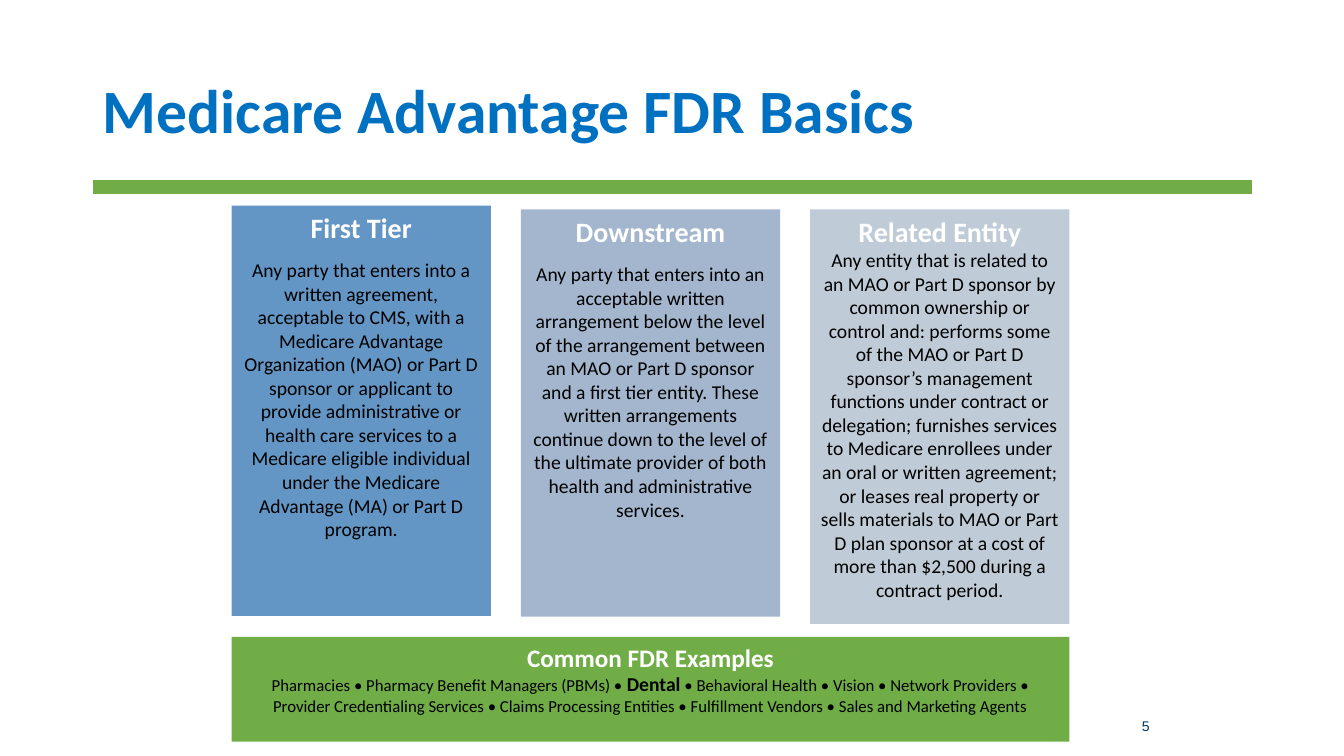
from dataclasses import dataclass

import pptx
import pptx.dml.color
import pptx.enum.shapes
import pptx.enum.text
import pptx.oxml
import pptx.util

Cm, Pt = pptx.util.Cm, pptx.util.Pt
Align = pptx.enum.text.PP_ALIGN
Anchor = pptx.enum.text.MSO_ANCHOR

COLORS = {
    "title": "0070C0", "green": "70AD47", "number": "00355F",
    "first": "6396C5", "downstream": "A3B6CD", "related": "BFCCD7",
    "white": "FFFFFF", "black": "000000",
}
RULE_LEFT, RULE_TOP, RULE_WIDTH = 2.34, 4.7, 29.21
TIER_LEFT, TIER_WIDTH, TIER_PITCH = 5.84, 6.53, 7.29


@dataclass(frozen=True)
class Span:
    text: str
    size: float
    color: str = "black"
    bold: bool = False
    font: str = "Calibri"


@dataclass(frozen=True)
class Para:
    spans: tuple[Span, ...]
    align: Align = Align.CENTER
    formats: tuple[tuple[str, object], ...] = ()


@dataclass(frozen=True)
class Tier:
    heading: str
    body: str
    color: str
    top: float
    height: float
    gap: float = 0


TIERS = (
    Tier("First Tier",
         "Any party that enters into a written agreement, acceptable to CMS, with a "
         "Medicare Advantage Organization (MAO) or Part D sponsor or applicant to provide "
         "administrative or health care services to a Medicare eligible individual under "
         "the Medicare Advantage (MA) or Part D program.",
         "first", 5.18, 10.34, 10),
    Tier("Downstream",
         "Any party that enters into an acceptable written arrangement below the level of "
         "the arrangement between an MAO or Part D sponsor and a first tier entity. These "
         "written arrangements continue down to the level of the ultimate provider of both "
         "health and administrative services.",
         "downstream", 5.28, 10.26, 10),
    Tier("Related Entity",
         "Any entity that is related to an MAO or Part D sponsor by common ownership or "
         "control and: performs some of the MAO or Part D sponsor’s management functions "
         "under contract or delegation; furnishes services to Medicare enrollees under an "
         "oral or written agreement; or leases real property or sells materials to MAO or "
         "Part D plan sponsor at a cost of more than $2,500 during a contract period.",
         "related", 5.28, 10.44),
)
EXAMPLES = (
    Span("Pharmacies • Pharmacy Benefit Managers (PBMs) • ", 12),
    Span("Dental", 14, bold=True),
    Span(" • Behavioral Health • Vision • Network Providers • Provider Credentialing "
         "Services • Claims Processing Entities • Fulfillment Vendors • Sales and "
         "Marketing Agents", 12),
)


def rgb(name: str) -> pptx.dml.color.RGBColor:
    return pptx.dml.color.RGBColor.from_string(COLORS[name])


def apply(target: object, formats: dict[str, object]) -> None:
    for name, value in formats.items():
        setattr(target, name, value)


def write(box, paras: tuple[Para, ...], anchor: Anchor = Anchor.TOP, **frame_formats) -> None:
    frame = box.text_frame
    apply(frame, {"word_wrap": True, "vertical_anchor": anchor,
                  "auto_size": pptx.enum.text.MSO_AUTO_SIZE.NONE, **frame_formats})
    for index, item in enumerate(paras):
        para = frame.add_paragraph() if index else frame.paragraphs[0]
        apply(para, {"alignment": item.align, **dict(item.formats)})
        for span in item.spans:
            run = para.add_run()
            run.text = span.text
            apply(run.font, {"name": span.font, "size": Pt(span.size), "bold": span.bold})
            run.font.color.rgb = rgb(span.color)


def add_panel(page, left: float, top: float, width: float, height: float,
              color: str, paras: tuple[Para, ...]) -> None:
    box = page.shapes.add_shape(pptx.enum.shapes.MSO_SHAPE.RECTANGLE,
                                Cm(left), Cm(top), Cm(width), Cm(height))
    box.shadow.inherit = False
    box.fill.solid()
    box.fill.fore_color.rgb = rgb(color)
    box.line.fill.background()
    write(box, paras)


def add_rule(page) -> None:
    rule = page.shapes.add_connector(pptx.enum.shapes.MSO_CONNECTOR.STRAIGHT,
                                     Cm(RULE_LEFT), Cm(RULE_TOP),
                                     Cm(RULE_LEFT + RULE_WIDTH), Cm(RULE_TOP))
    rule.line.width = Pt(10)
    rule.line.color.rgb = rgb("green")
    properties = rule.element.spPr
    properties.append(properties.makeelement(pptx.oxml.ns.qn("a:effectLst"), {}))


def main() -> None:
    deck = pptx.Presentation()
    apply(deck, {"slide_width": Cm(33.87), "slide_height": Cm(19.05)})
    page = deck.slides.add_slide(deck.slide_layouts[6])

    add_rule(page)
    title = page.shapes.add_textbox(Cm(RULE_LEFT), Cm(1.02), Cm(RULE_WIDTH), Cm(3.68))
    write(title, (Para((Span("Medicare Advantage FDR Basics", 44, "title", True),),
                       Align.LEFT, (("line_spacing", 0.9),)),), Anchor.MIDDLE)
    number = page.shapes.add_textbox(Cm(28.09), Cm(17.78), Cm(1.27), Cm(1.02))
    write(number, (Para((Span("5", 10, "number", font="Arial"),), Align.LEFT),),
          Anchor.MIDDLE, margin_left=Cm(0.69), margin_right=0, margin_top=0, margin_bottom=0)

    for index, tier in enumerate(TIERS):
        add_panel(page, TIER_LEFT + index * TIER_PITCH, tier.top, TIER_WIDTH, tier.height,
                  tier.color,
                  (Para((Span(tier.heading, 20, "white", True),)),
                   Para((Span(tier.body, 14),), formats=(("space_before", Pt(tier.gap)),))))
    add_panel(page, TIER_LEFT, 16.05, 2 * TIER_PITCH + TIER_WIDTH, 2.64, "green",
              (Para((Span("Common FDR Examples", 18, "white", True),)), Para(EXAMPLES)))
    deck.save("out.pptx")


if __name__ == "__main__":
    main()
